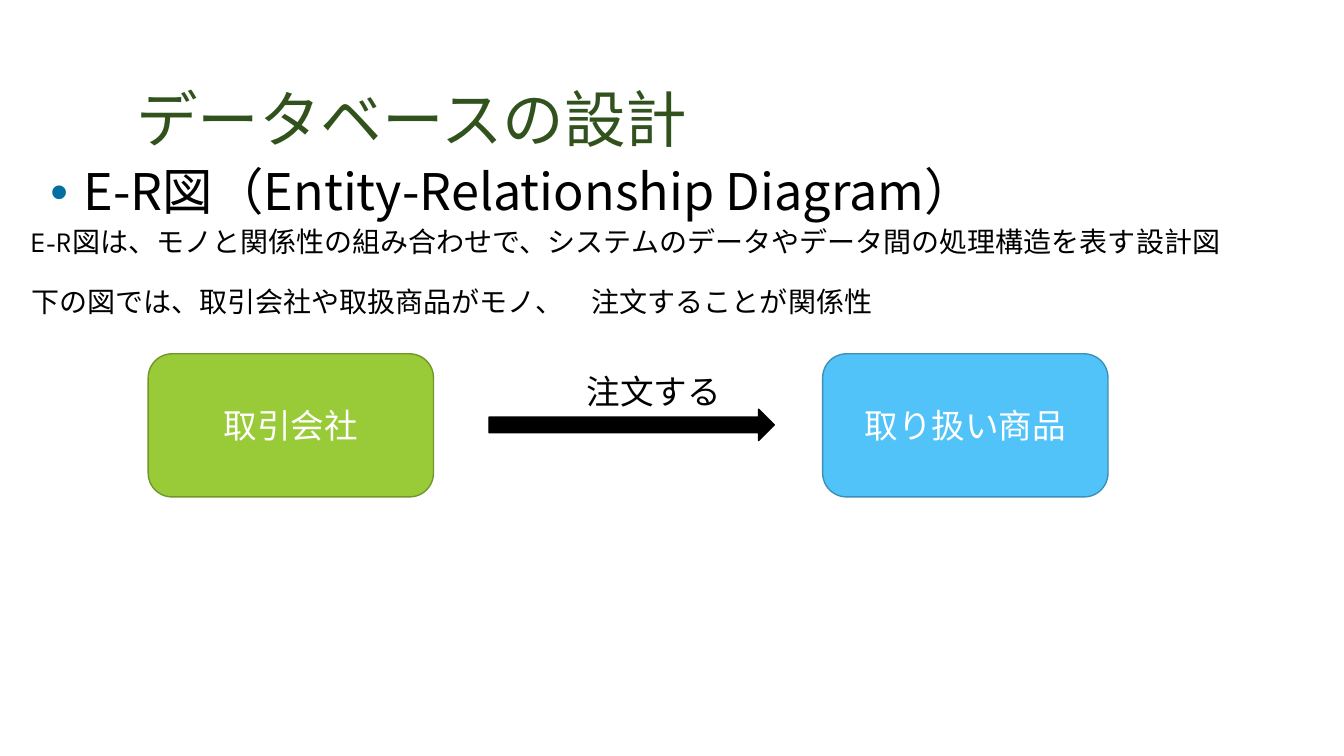
from dataclasses import dataclass

from lxml.etree import SubElement
from pptx import Presentation
from pptx.dml.color import RGBColor
from pptx.enum.shapes import MSO_SHAPE
from pptx.enum.text import MSO_ANCHOR, PP_ALIGN
from pptx.oxml.ns import qn
from pptx.slide import Slide
from pptx.text.text import TextFrame, _Paragraph
from pptx.util import Inches, Pt

COLORS = {
    "title": "31521C",
    "text": "000000",
    "bullet": "056EA0",
    "label": "FFFFFF",
    "company": "99CB38",
    "company_line": "719629",
    "product": "51C3F9",
    "product_line": "3C90B8",
    "arrow": "000000",
}
HEADING_FONT = "Noto Sans CJK JP"
BODY_FONT = "League Spartan"
BLOCK_WIDTH = 2.83


@dataclass
class TextBlock:
    box: tuple[float, float, float, float]
    lines: list[str]
    size: float
    font: str = BODY_FONT
    color: str = "text"
    anchor: MSO_ANCHOR = MSO_ANCHOR.TOP
    inset: tuple[float, float] = (0.1, 0.05)
    line_spacing: float = 1.0
    gap: float = 0
    bullet: bool = False


@dataclass
class Block:
    shape: MSO_SHAPE
    left: float
    top: float
    height: float
    fill: str
    line: str
    label: str = ""


TEXTS = [
    TextBlock((1.22, 0.08, 11.11, 1.53), ["データベースの設計"], 44, HEADING_FONT,
              "title", MSO_ANCHOR.BOTTOM, (0.13, 0.07), 0.85),
    TextBlock((0.37, 1.56, 12.6, 5.65), ["E-R図（Entity-Relationship Diagram）"], 36,
              HEADING_FONT, inset=(0.13, 0.07), line_spacing=0.95, bullet=True),
    TextBlock((0.21, 2.18, 12.91, 1.11),
              ["E-R図は、モノと関係性の組み合わせで、システムのデータやデータ間の処理構造を表す設計図",
               "下の図では、取引会社や取扱商品がモノ、　注文することが関係性"], 20, gap=18.4),
    TextBlock((5.72, 3.66, 1.89, 0.48), ["注文する"], 24, line_spacing=0.95),
]
BLOCKS = [
    Block(MSO_SHAPE.ROUNDED_RECTANGLE, 1.47, 3.51, 1.42, "company", "company_line", "取引会社"),
    Block(MSO_SHAPE.ROUNDED_RECTANGLE, 8.16, 3.51, 1.42, "product", "product_line", "取り扱い商品"),
    Block(MSO_SHAPE.RIGHT_ARROW, 4.85, 4.06, 0.31, "arrow", "arrow"),
]


def rgb(name: str) -> RGBColor:
    return RGBColor.from_string(COLORS[name])


def add_run(p: _Paragraph, text: str, size: float, font: str, color: str) -> None:
    """Add a run whose Latin and East Asian letters share one font."""
    r = p.add_run()
    r.text = text
    r.font.size = Pt(size)
    r.font.name = font
    r.font.color.rgb = rgb(color)
    SubElement(r.font._element, qn("a:ea"), typeface=font)


def add_bullet(p: _Paragraph) -> None:
    pPr = p._p.get_or_add_pPr()
    pPr.set("marL", str(Inches(0.33)))
    pPr.set("indent", str(-Inches(0.33)))
    color = SubElement(pPr, qn("a:buClr"))
    SubElement(color, qn("a:srgbClr"), val=COLORS["bullet"])
    SubElement(pPr, qn("a:buFont"), typeface="Arial")
    SubElement(pPr, qn("a:buChar"), char="•")


def set_frame(tf: TextFrame, anchor: MSO_ANCHOR, inset: tuple[float, float]) -> None:
    tf.word_wrap = True
    tf.vertical_anchor = anchor
    tf.margin_left = tf.margin_right = Inches(inset[0])
    tf.margin_top = tf.margin_bottom = Inches(inset[1])


def add_text(s: Slide, block: TextBlock) -> None:
    tf = s.shapes.add_textbox(*map(Inches, block.box)).text_frame
    set_frame(tf, block.anchor, block.inset)
    for i, line in enumerate(block.lines):
        p = tf.add_paragraph() if i else tf.paragraphs[0]
        p.line_spacing = block.line_spacing
        if i:
            p.space_before = Pt(block.gap)
        if block.bullet:
            add_bullet(p)
        add_run(p, line, block.size, block.font, block.color)


def add_block(s: Slide, block: Block) -> None:
    sp = s.shapes.add_shape(block.shape, Inches(block.left), Inches(block.top),
                            Inches(BLOCK_WIDTH), Inches(block.height))
    sp.shadow.inherit = False
    sp.fill.solid()
    sp.fill.fore_color.rgb = rgb(block.fill)
    sp.line.color.rgb = rgb(block.line)
    sp.line.width = Pt(1)
    if block.label:
        set_frame(sp.text_frame, MSO_ANCHOR.MIDDLE, (0.1, 0.05))
        p = sp.text_frame.paragraphs[0]
        p.alignment = PP_ALIGN.CENTER
        add_run(p, block.label, 24, BODY_FONT, "label")


def main() -> None:
    prs = Presentation()
    prs.slide_width, prs.slide_height = Inches(13.33), Inches(7.5)
    s = prs.slides.add_slide(prs.slide_layouts[6])
    *intro, arrow_label = TEXTS
    for text in intro:
        add_text(s, text)
    for block in BLOCKS:
        add_block(s, block)
    add_text(s, arrow_label)
    prs.save("out.pptx")


if __name__ == "__main__":
    main()
